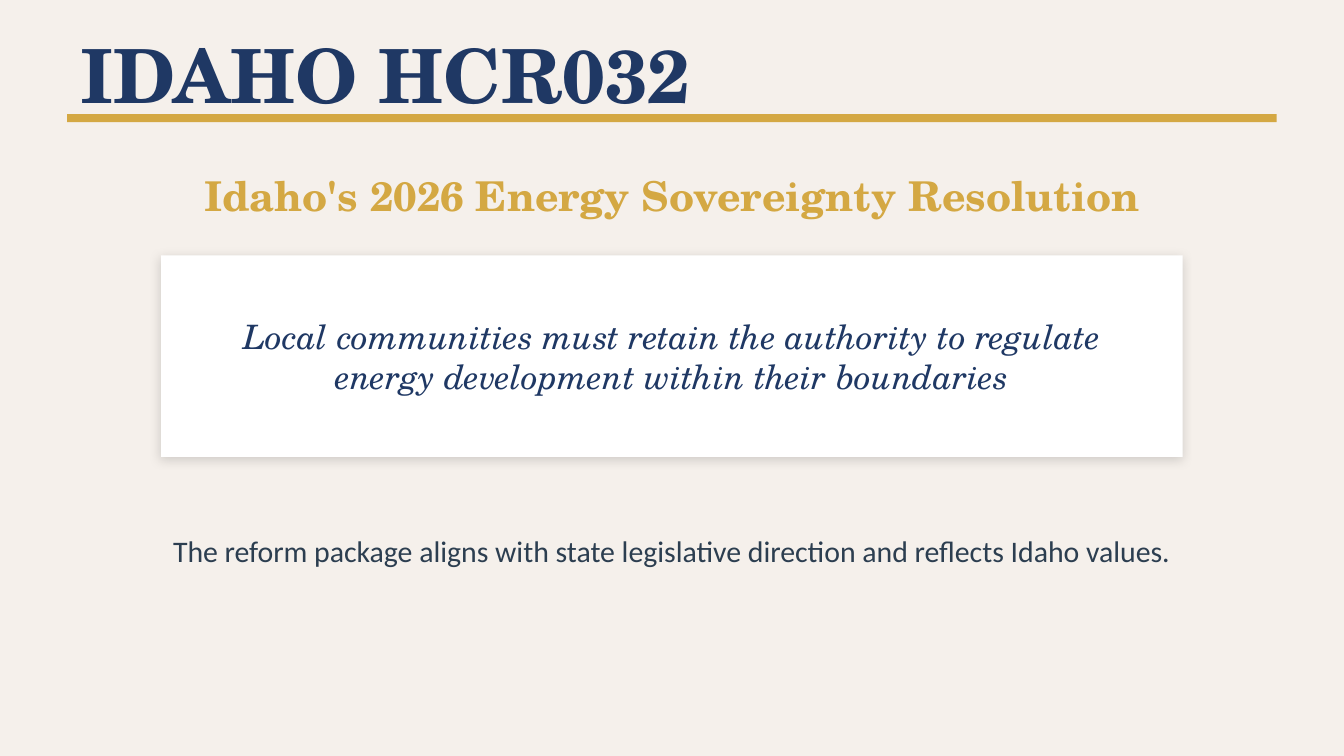
from dataclasses import dataclass

from lxml.etree import SubElement
from pptx import Presentation
from pptx.dml.color import RGBColor
from pptx.enum.shapes import MSO_SHAPE
from pptx.enum.text import MSO_ANCHOR, MSO_AUTO_SIZE, PP_ALIGN
from pptx.oxml.ns import qn
from pptx.shapes.autoshape import Shape
from pptx.slide import Slide
from pptx.util import Inches, Pt

NAVY = RGBColor(0x1F, 0x38, 0x64)
GOLD = RGBColor(0xD4, 0xA8, 0x43)
SLATE = RGBColor(0x2C, 0x3E, 0x50)
CREAM = RGBColor(0xF5, 0xF0, 0xEB)
WHITE = RGBColor(0xFF, 0xFF, 0xFF)
SERIF = "TeX Gyre Schola"
SANS = "Calibri"
TITLE_ONLY = 5
SLIDE_WIDTH = 10
SLIDE_HEIGHT = SLIDE_WIDTH * 9 / 16


@dataclass(frozen=True)
class Box:
    left: float
    top: float
    width: float
    height: float

    def lengths(self) -> tuple[Inches, Inches, Inches, Inches]:
        return (Inches(self.left), Inches(self.top),
                Inches(self.width), Inches(self.height))


@dataclass(frozen=True)
class TextLine:
    text: str
    box: Box
    size: int
    color: RGBColor
    font: str = SERIF
    bold: bool = False
    italic: bool = False
    align: PP_ALIGN = PP_ALIGN.CENTER


TITLE = TextLine("IDAHO HCR032", Box(0.5, 0.3, 9, 0.5), 40, NAVY,
                 bold=True, align=PP_ALIGN.LEFT)
SUBTITLE = TextLine("Idaho's 2026 Energy Sovereignty Resolution",
                    Box(1, 1.2, 8, 0.5), 22, GOLD, bold=True)
QUOTE = TextLine("Local communities must retain the authority to regulate "
                 "energy development within their boundaries",
                 Box(1.4, 2.1, 7.2, 1.1), 18, NAVY, italic=True)
CLOSING = TextLine("The reform package aligns with state legislative direction "
                   "and reflects Idaho values.",
                   Box(1, 3.7, 8, 0.8), 16, SLATE, font=SANS)
TITLE_RULE = Box(0.5, 0.85, 9, 0.06)
QUOTE_CARD = Box(1.2, 1.9, 7.6, 1.5)


def write_text(shape: Shape, line: TextLine) -> None:
    """Place the shape and fill it with one formatted paragraph."""
    shape.left, shape.top, shape.width, shape.height = line.box.lengths()
    frame = shape.text_frame
    frame.text = line.text
    frame.word_wrap = True
    frame.auto_size = MSO_AUTO_SIZE.NONE
    frame.vertical_anchor = MSO_ANCHOR.MIDDLE
    paragraph = frame.paragraphs[0]
    paragraph.alignment = line.align
    font = paragraph.font
    font.name = line.font
    font.size = Pt(line.size)
    font.bold = line.bold
    font.italic = line.italic
    font.color.rgb = line.color


def add_text(slide: Slide, line: TextLine) -> None:
    write_text(slide.shapes.add_textbox(*line.box.lengths()), line)


def add_rectangle(slide: Slide, box: Box, color: RGBColor) -> Shape:
    shape = slide.shapes.add_shape(MSO_SHAPE.RECTANGLE, *box.lengths())
    shape.shadow.inherit = False
    shape.fill.solid()
    shape.fill.fore_color.rgb = color
    shape.line.fill.background()
    return shape


def add_soft_shadow(shape: Shape) -> None:
    effects = shape._element.spPr.find(qn("a:effectLst"))
    shadow = SubElement(effects, qn("a:outerShdw"), blurRad=str(Pt(6)),
                        dist=str(Pt(2)), dir=str(135 * 60000),
                        algn="bl", rotWithShape="0")
    color = SubElement(shadow, qn("a:srgbClr"), val="000000")
    SubElement(color, qn("a:alpha"), val="15000")


def main() -> None:
    presentation = Presentation()
    presentation.slide_width = Inches(SLIDE_WIDTH)
    presentation.slide_height = Inches(SLIDE_HEIGHT)
    slide = presentation.slides.add_slide(presentation.slide_layouts[TITLE_ONLY])
    slide.background.fill.solid()
    slide.background.fill.fore_color.rgb = CREAM

    write_text(slide.shapes.title, TITLE)
    add_rectangle(slide, TITLE_RULE, GOLD)
    add_text(slide, SUBTITLE)
    add_soft_shadow(add_rectangle(slide, QUOTE_CARD, WHITE))
    add_text(slide, QUOTE)
    add_text(slide, CLOSING)
    presentation.save("out.pptx")


if __name__ == "__main__":
    main()
